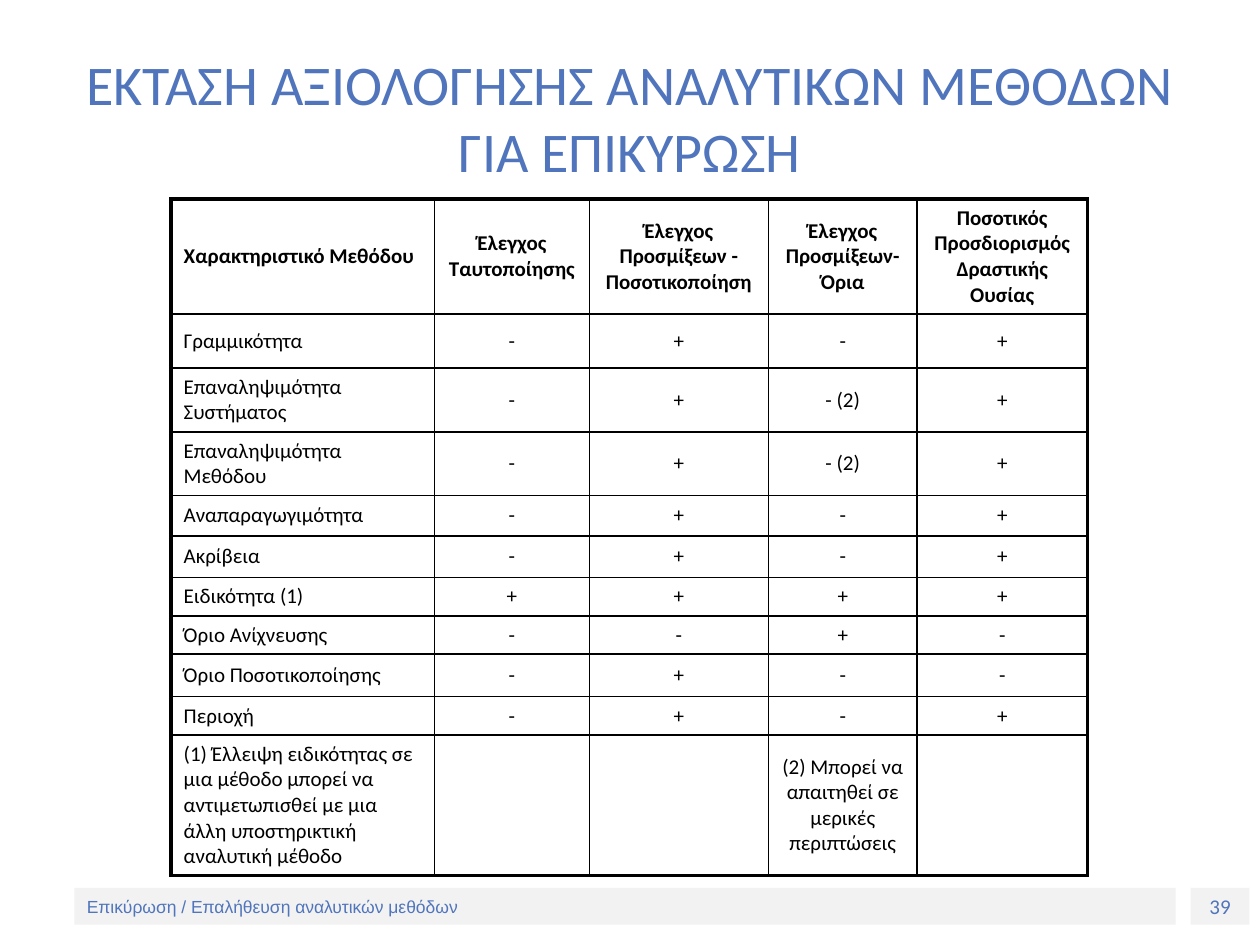
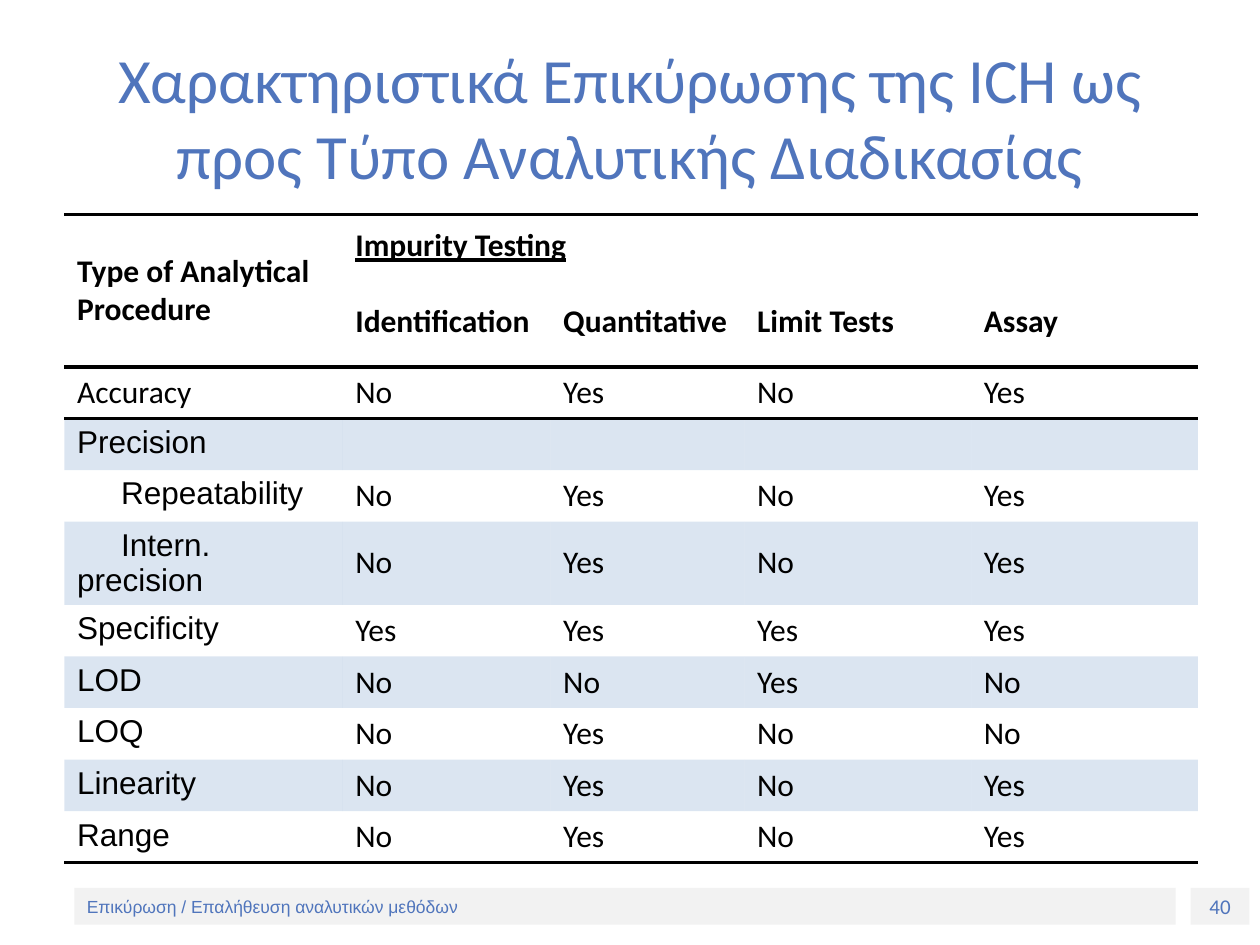
from dataclasses import dataclass

from lxml import etree
from pptx import Presentation
from pptx.dml.color import RGBColor
from pptx.enum.shapes import MSO_SHAPE
from pptx.enum.text import MSO_ANCHOR, PP_ALIGN
from pptx.oxml.ns import qn
from pptx.util import Cm, Pt

RECTANGLE = MSO_SHAPE.RECTANGLE
MIDDLE, TOP = MSO_ANCHOR.MIDDLE, MSO_ANCHOR.TOP
LEFT, CENTER = PP_ALIGN.LEFT, PP_ALIGN.CENTER
TITLE_ONLY = 5
NO_TABLE_STYLE = "{2D5ABB26-0587-4C30-8999-92F81FD0307C}"


@dataclass(frozen=True)
class Theme:
    accent: str = "5075BC"
    ink: str = "000000"
    band: str = "F2F2F2"
    stripe: str = "4F81BD"
    stripe_opacity: int = 20
    heading_font: str = "Calibri"
    plain_font: str = "Arial"
    footer_size: float = 10
    number_size: float = 12
    thin: float = 1
    thick: float = 2.25


@dataclass(frozen=True)
class TextStyle:
    size: float
    color: str
    font: str = "Calibri"
    bold: bool = False
    underline: bool = False
    align: PP_ALIGN = LEFT


@dataclass(frozen=True)
class Band:
    """A footer rectangle; lengths in centimetres."""
    left: float
    width: float
    style: TextStyle


@dataclass(frozen=True)
class Grid:
    """Place, column widths and row heights of a table in centimetres."""
    left: float
    top: float
    columns: tuple
    rows: tuple


THEME = Theme()
FOOTER_TEXT = "Επικύρωση / Επαλήθευση αναλυτικών μεθόδων"
NUMBER_BAND = Band(24.0, 1.19, TextStyle(THEME.number_size, THEME.accent, align=CENTER))
FOOTER_BAND = Band(1.5, 22.2, TextStyle(THEME.footer_size, THEME.accent, THEME.plain_font))

EXTENT_GRID = Grid(3.45, 4.01, (5.31, 3.12, 3.61, 3.0, 3.43),
                   (2.08, 1.09, 1.17, 1.09, 0.81, 0.84, 0.74, 0.71, 0.86, 0.71, 2.54))
EXTENT_ROWS = (
    ("Χαρακτηριστικό Μεθόδου", "Έλεγχος Ταυτοποίησης", "Έλεγχος Προσμίξεων - Ποσοτικοποίηση",
     "Έλεγχος Προσμίξεων- Όρια", "Ποσοτικός Προσδιορισμός Δραστικής Ουσίας"),
    ("Γραμμικότητα", "-", "+", "-", "+"),
    ("Επαναληψιμότητα Συστήματος", "-", "+", "- (2)", "+"),
    ("Επαναληψιμότητα Μεθόδου", "-", "+", "- (2)", "+"),
    ("Αναπαραγωγιμότητα", "-", "+", "-", "+"),
    ("Ακρίβεια", "-", "+", "-", "+"),
    ("Ειδικότητα (1)", "+", "+", "+", "+"),
    ("Όριο Ανίχνευσης", "-", "-", "+", "-"),
    ("Όριο Ποσοτικοποίησης", "-", "+", "-", "-"),
    ("Περιοχή", "-", "+", "-", "+"),
    ("(1) Έλλειψη ειδικότητας σε μια μέθοδο μπορεί να αντιμετωπισθεί με μια άλλη "
     "υποστηρικτική αναλυτική μέθοδο", "", "", "(2) Μπορεί να απαιτηθεί σε μερικές περιπτώσεις", ""),
)

ICH_GRID = Grid(1.3, 4.32, (5.61, 4.19, 3.91, 4.57, 4.57), (1.27, 1.8) + (1.04,) * 9)
ICH_ROWS = (
    ("Type of Analytical Procedure", "Impurity Testing", "", "", ""),
    ("", "Identification", "Quantitative", "Limit Tests", "Assay"),
    ("Accuracy", "No", "Yes", "No", "Yes"),
    ("Precision", "", "", "", ""),
    ("Repeatability", "No", "Yes", "No", "Yes"),
    ("Intern. precision", "No", "Yes", "No", "Yes"),
    ("Specificity", "Yes", "Yes", "Yes", "Yes"),
    ("LOD", "No", "No", "Yes", "No"),
    ("LOQ", "No", "Yes", "No", "No"),
    ("Linearity", "No", "Yes", "No", "Yes"),
    ("Range", "No", "Yes", "No", "Yes"),
)
PRECISION_KINDS = ("Repeatability", "Intern. precision")


def write(frame, text: str, style: TextStyle) -> None:
    frame.text = text
    para = frame.paragraphs[0]
    para.alignment = style.align
    for span in para.runs:
        span.font.size = Pt(style.size)
        span.font.name = style.font
        span.font.bold = style.bold
        span.font.underline = style.underline
        span.font.color.rgb = RGBColor.from_string(style.color)


def add_band(slide, band: Band, text: str) -> None:
    box = slide.shapes.add_shape(RECTANGLE, Cm(band.left), Cm(17.9), Cm(band.width), Cm(0.74))
    box.shadow.inherit = False
    box.fill.solid()
    box.fill.fore_color.rgb = RGBColor.from_string(THEME.band)
    box.line.fill.background()
    box.text_frame.word_wrap = True
    box.text_frame.vertical_anchor = MIDDLE
    write(box.text_frame, text, band.style)


def add_page(deck, title: str, title_size: float, number: int):
    page = deck.slides.add_slide(deck.slide_layouts[TITLE_ONLY])
    add_band(page, NUMBER_BAND, str(number))
    add_band(page, FOOTER_BAND, FOOTER_TEXT)
    box = page.shapes.title
    box.left, box.top, box.width, box.height = Cm(1.27), Cm(0.76), Cm(22.86), Cm(3.18)
    box.text_frame.vertical_anchor = MIDDLE
    write(box.text_frame, title, TextStyle(title_size, THEME.accent, THEME.heading_font, align=CENTER))
    return page


def add_grid(page, grid: Grid):
    """Add an unstyled table with the grid's column widths and row heights."""
    table = page.shapes.add_table(len(grid.rows), len(grid.columns), Cm(grid.left), Cm(grid.top),
                                  Cm(sum(grid.columns)), Cm(sum(grid.rows))).table
    table.first_row = table.horz_banding = False
    table._tbl.tblPr.find(qn("a:tableStyleId")).text = NO_TABLE_STYLE
    for column, width in zip(table.columns, grid.columns):
        column.width = Cm(width)
    for row, height in zip(table.rows, grid.rows):
        row.height = Cm(height)
    return table


def set_borders(cell, **widths: float) -> None:
    """Draw the given sides (L, R, T, B in this order) with widths in points."""
    properties = cell._tc.get_or_add_tcPr()
    for side, width in widths.items():
        line = etree.SubElement(properties, qn(f"a:ln{side}"), w=str(Pt(width)))
        fill = etree.SubElement(line, qn("a:solidFill"))
        etree.SubElement(fill, qn("a:srgbClr"), val=THEME.ink)


def fill_stripe(cell) -> None:
    cell.fill.solid()
    cell.fill.fore_color.rgb = RGBColor.from_string(THEME.stripe)
    color = cell._tc.tcPr.find(f".//{qn('a:srgbClr')}")
    etree.SubElement(color, qn("a:alpha"), val=str(THEME.stripe_opacity * 1000))


def add_extent_table(page) -> None:
    table = add_grid(page, EXTENT_GRID)
    last_row, last_column = len(EXTENT_ROWS) - 1, len(EXTENT_GRID.columns) - 1
    for r, texts in enumerate(EXTENT_ROWS):
        for c, text in enumerate(texts):
            cell = table.cell(r, c)
            cell.vertical_anchor = MIDDLE
            write(cell.text_frame, text,
                  TextStyle(12, THEME.ink, bold=r == 0, align=CENTER if c else LEFT))
            outer = {"L": c == 0, "R": c == last_column, "T": r == 0, "B": r == last_row}
            set_borders(cell, **{side: THEME.thick if edge else THEME.thin
                                 for side, edge in outer.items()})


def add_ich_table(page) -> None:
    table = add_grid(page, ICH_GRID)
    table.cell(0, 0).merge(table.cell(1, 0))
    table.cell(0, 1).merge(table.cell(0, 4))
    last_row = len(ICH_ROWS) - 1
    for r, texts in enumerate(ICH_ROWS):
        header = r < 2
        for c, text in enumerate(texts):
            cell = table.cell(r, c)
            cell.vertical_anchor = MIDDLE if header or c else TOP
            plain = c == 0 and r > 2
            style = TextStyle(18, THEME.ink, THEME.plain_font if plain else THEME.heading_font,
                              bold=header, underline=r == 0 and c == 1)
            write(cell.text_frame, text, style)
            if text in PRECISION_KINDS:
                cell.text_frame.paragraphs[0]._p.get_or_add_pPr().set("indent", str(Cm(0.89)))
            if r in (0, 2):
                set_borders(cell, T=THEME.thick)
            if r in (1, last_row):
                set_borders(cell, B=THEME.thick)
            if not header and r % 2:
                fill_stripe(cell)


def main() -> None:
    deck = Presentation()
    deck.slide_width, deck.slide_height = Cm(25.4), Cm(19.05)
    add_extent_table(add_page(deck, "ΕΚΤΑΣΗ ΑΞΙΟΛΟΓΗΣΗΣ ΑΝΑΛΥΤΙΚΩΝ ΜΕΘΟΔΩΝ ΓΙΑ ΕΠΙΚΥΡΩΣΗ", 32, 39))
    add_ich_table(add_page(
        deck, "Χαρακτηριστικά Επικύρωσης της ICH ως προς Τύπο Αναλυτικής Διαδικασίας", 36, 40))
    deck.save("out.pptx")


if __name__ == "__main__":
    main()
